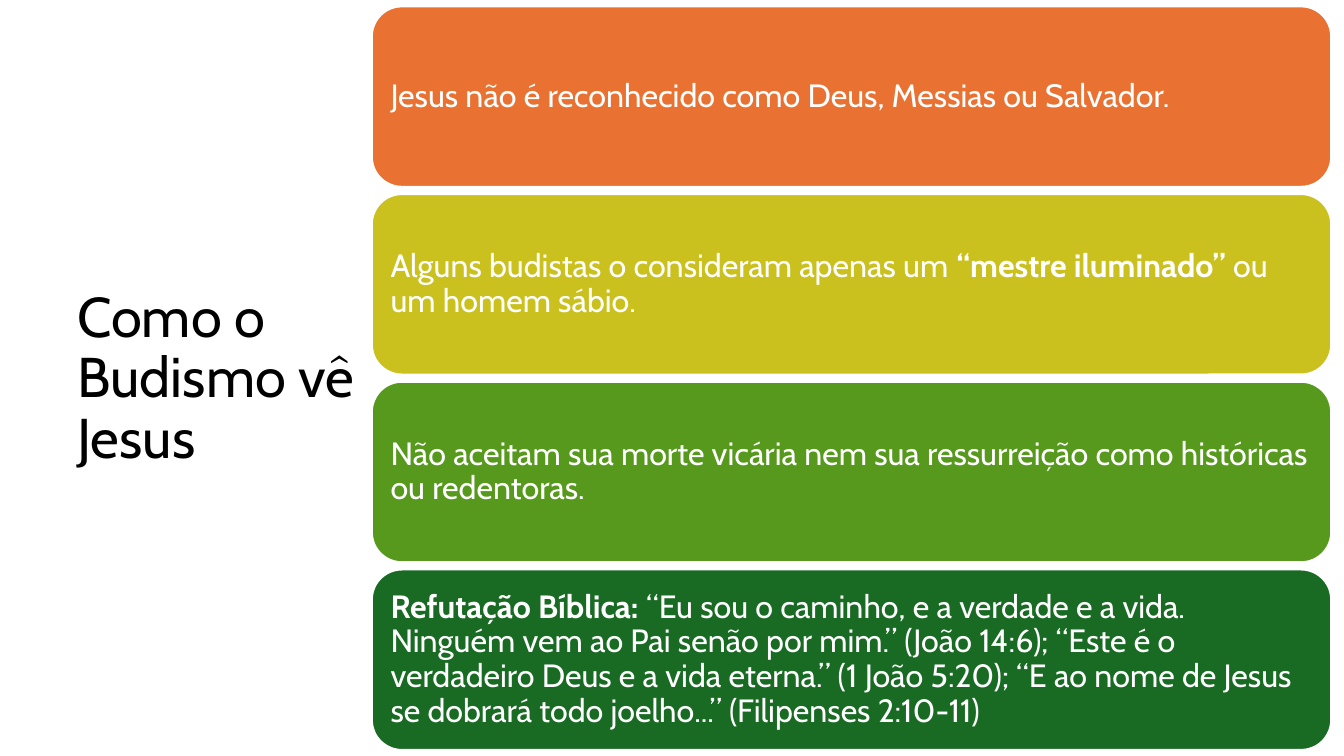
from dataclasses import dataclass

from pptx import Presentation
from pptx.dml.color import RGBColor
from pptx.enum.shapes import MSO_SHAPE
from pptx.enum.text import MSO_ANCHOR, MSO_AUTO_SIZE, PP_ALIGN
from pptx.util import Cm, Pt


@dataclass(frozen=True)
class Theme:
    font: str = "Cabin"
    title_size: float = 40
    body_size: float = 23
    dark: str = "000000"
    light: str = "FFFFFF"
    cards: tuple = ("E97132", "CBC11E", "56991D", "196B24")


class Deck:
    def __init__(self, prs, theme):
        self.theme = theme
        self.s = prs.slides.add_slide(prs.slide_layouts[5])

    def add_text(self, tf, runs, size, color):
        tf.word_wrap = True
        tf.auto_size = MSO_AUTO_SIZE.NONE
        tf.vertical_anchor = MSO_ANCHOR.MIDDLE
        p = tf.paragraphs[0]
        p.alignment = PP_ALIGN.LEFT
        p.line_spacing = 0.9
        for text, bold in runs:
            r = p.add_run()
            r.text = text
            r.font.name = self.theme.font
            r.font.size = Pt(size)
            r.font.bold = bold
            r.font.color.rgb = RGBColor.from_string(color)

    def title(self, text, left, top, width, height):
        sp = self.s.shapes.title
        sp.left, sp.top, sp.width, sp.height = Cm(left), Cm(top), Cm(width), Cm(height)
        self.add_text(sp.text_frame, [(text, False)], self.theme.title_size, self.theme.dark)

    def card(self, runs, fill, left, top, width, height):
        sp = self.s.shapes.add_shape(
            MSO_SHAPE.ROUNDED_RECTANGLE, Cm(left), Cm(top), Cm(width), Cm(height))
        sp.shadow.inherit = False
        sp.fill.solid()
        sp.fill.fore_color.rgb = RGBColor.from_string(fill)
        sp.line.color.rgb = RGBColor.from_string(self.theme.light)
        sp.line.width = Pt(1.5)
        tf = sp.text_frame
        tf.margin_left = tf.margin_right = tf.margin_top = tf.margin_bottom = Cm(0.25)
        self.add_text(tf, runs, self.theme.body_size, self.theme.light)


# Runs of each card as (text, bold)
CARDS = [
    [("Jesus não é reconhecido como Deus, Messias ou Salvador.", False)],
    [("Alguns budistas o consideram apenas um ", False),
     ("“mestre iluminado”", True),
     (" ou um homem sábio.", False)],
    [("Não aceitam sua morte vicária nem sua ressurreição como históricas "
      "ou redentoras.", False)],
    [("Refutação Bíblica: ", True),
     ("“Eu sou o caminho, e a verdade e a vida. Ninguém vem ao Pai senão por mim.” "
      "(João 14:6); “Este é o verdadeiro Deus e a vida eterna.” (1 João 5:20); "
      "“E ao nome de Jesus se dobrará todo joelho...” (Filipenses 2:10-11)", False)],
]


def main():
    prs = Presentation()
    prs.slide_width, prs.slide_height = Cm(33.87), Cm(19.05)
    theme = Theme()
    deck = Deck(prs, theme)

    # Title on the left
    deck.title("Como o Budismo vê Jesus", 1.7, 1.52, 9.7, 16.08)

    # Stack of cards on the right
    top, height, gap = 0.16, 4.55, 0.18
    for i, (runs, fill) in enumerate(zip(CARDS, theme.cards)):
        deck.card(runs, fill, 9.37, top + i * (height + gap), 24.18, height)

    prs.save("out.pptx")


if __name__ == "__main__":
    main()
